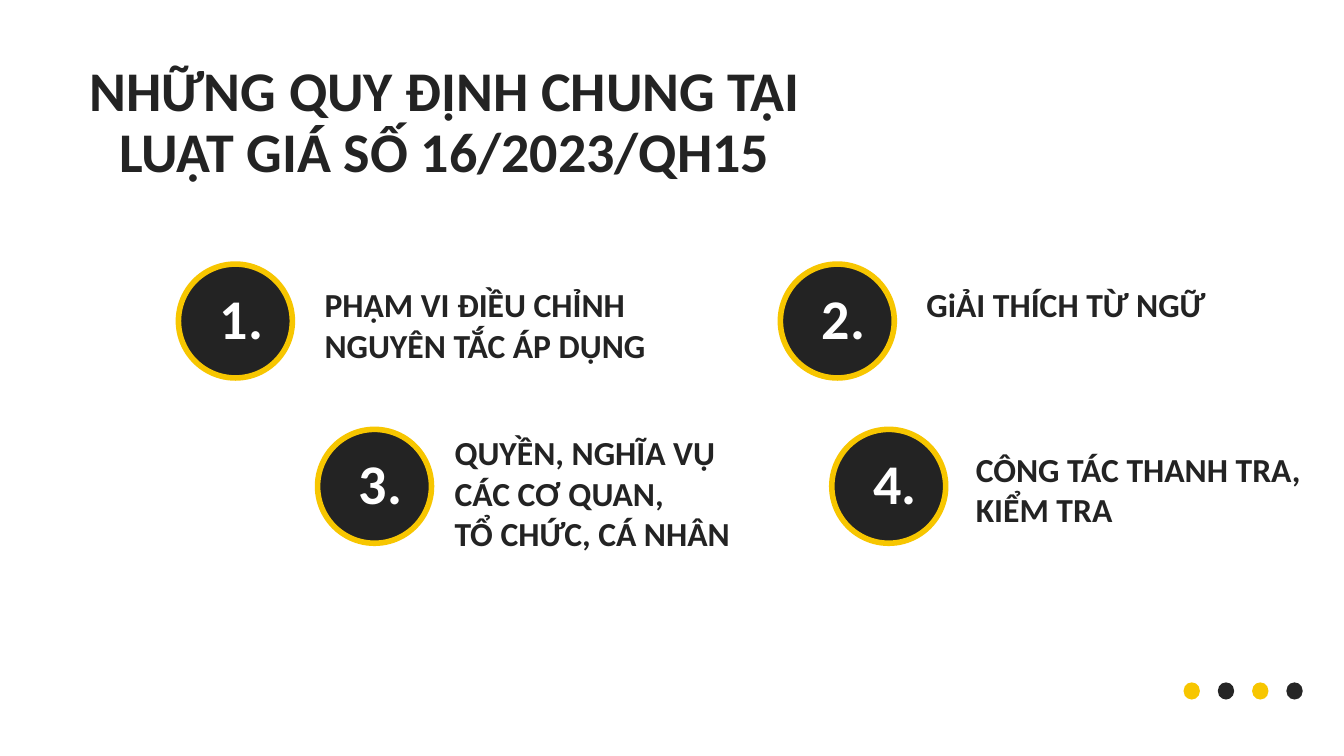
"""Build the slide listing the four general provisions of the price law."""
from pptx import Presentation
from pptx.dml.color import RGBColor
from pptx.enum.shapes import MSO_SHAPE
from pptx.enum.text import MSO_AUTO_SIZE, PP_ALIGN
from pptx.util import Inches, Pt

OVAL = MSO_SHAPE.OVAL
PILL = MSO_SHAPE.ROUNDED_RECTANGLE
FIT = MSO_AUTO_SIZE.SHAPE_TO_FIT_TEXT
LEFT, CENTER = PP_ALIGN.LEFT, PP_ALIGN.CENTER
DARK, YELLOW, WHITE, DOT_DARK = "232323", "F7C600", "FFFFFF", "252525"


def rgb(value):
    return RGBColor.from_string(value)


def add_text(shapes, box, lines, size, color, align=LEFT, wrap=True, spacing=None):
    frame = shapes.add_textbox(*map(Inches, box)).text_frame
    frame.word_wrap = wrap
    frame.auto_size = FIT
    frame.text = "\n".join(lines)
    for paragraph in frame.paragraphs:
        paragraph.alignment = align
        paragraph.line_spacing = spacing
        font = paragraph.runs[0].font
        for key, value in {"name": "Calibri", "size": Pt(size), "bold": True}.items():
            setattr(font, key, value)
        font.color.rgb = rgb(color)


deck = Presentation()
deck.slide_width, deck.slide_height = Inches(13.33), Inches(7.5)
slide = deck.slides.add_slide(deck.slide_layouts[6])
slide.background.fill.solid()
slide.background.fill.fore_color.rgb = rgb(WHITE)

add_text(slide.shapes, (0.24, 0.58, 8.34, 1.31),
         ["NHỮNG QUY ĐỊNH CHUNG TẠI LUẬT GIÁ SỐ 16/2023/QH15"],
         40, DARK, CENTER, spacing=0.9)

provisions = [
    (1.77, 2.62, (3.12, 2.77, 3.41, 0.91), False,
     ["PHẠM VI ĐIỀU CHỈNH", "NGUYÊN TẮC ÁP DỤNG"]),
    (7.74, 2.62, (9.09, 2.77, 2.99, 0.5), False, ["GiẢI THÍCH TỪ NGỮ"]),
    (3.15, 4.26, (4.41, 4.24, 2.96, 1.31), False,
     ["QUYỀN, NGHĨA VỤ", "CÁC CƠ QUAN,", "TỔ CHỨC, CÁ NHÂN"]),
    (8.25, 4.26, (9.58, 4.4, 3.42, 0.91), True, ["CÔNG TÁC THANH TRA, KIỂM TRA"]),
]
for number, (left, top, label_box, wrap, lines) in enumerate(provisions, 1):
    provision = slide.shapes.add_group_shape().shapes
    add_text(provision, label_box, lines, 24, DARK, wrap=wrap)
    badge = provision.add_shape(OVAL, Inches(left), Inches(top), Inches(1.13), Inches(1.13))
    badge.shadow.inherit = False
    badge.fill.solid()
    badge.fill.fore_color.rgb = rgb(DARK)
    badge.line.color.rgb = rgb(YELLOW)
    badge.line.width = Pt(4)
    add_text(provision, (left + 0.04, top + 0.14, 1.17, 0.77), [f"{number}."],
             40, WHITE, CENTER)

dots = slide.shapes.add_group_shape().shapes
for index, color in enumerate([YELLOW, DOT_DARK] * 2):
    dot = dots.add_shape(PILL, Inches(11.74 + 0.34 * index), Inches(6.77),
                         Inches(0.16), Inches(0.17))
    dot.adjustments[0] = 0.5
    dot.shadow.inherit = False
    dot.fill.solid()
    dot.fill.fore_color.rgb = rgb(color)
    dot.line.fill.background()

deck.save("out.pptx")
